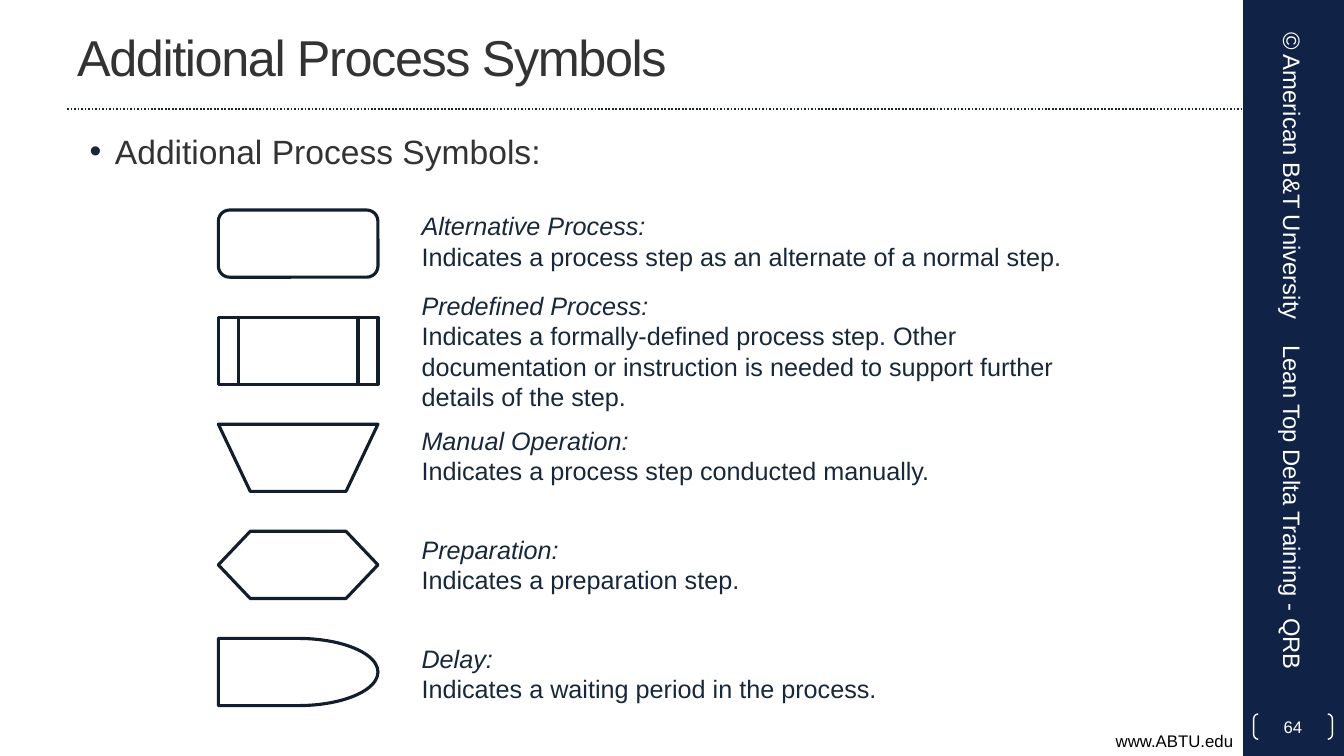
from dataclasses import dataclass

from lxml.etree import SubElement
from pptx import Presentation
from pptx.dml.color import RGBColor
from pptx.enum.dml import MSO_LINE
from pptx.enum.shapes import MSO_CONNECTOR, MSO_SHAPE
from pptx.enum.text import MSO_ANCHOR, MSO_AUTO_SIZE, PP_ALIGN
from pptx.oxml.ns import qn
from pptx.shapes.autoshape import Shape
from pptx.slide import Slide
from pptx.text.text import TextFrame
from pptx.util import Emu, Pt


@dataclass(frozen=True)
class Theme:
    """Colours, type sizes and font of the slide."""
    face: str = "Arial"
    band: str = "102245"
    rule: str = "17273B"
    edge: str = "121E2C"
    ink: str = "18283B"
    head: str = "333333"
    white: str = "FFFFFF"
    black: str = "000000"
    title: int = 36
    lead: int = 24
    body: int = 18
    side: int = 17
    small: int = 12


@dataclass(frozen=True)
class Box:
    """A frame in px."""
    left: int
    top: int
    width: int
    height: int


@dataclass(frozen=True)
class Label:
    """A line of text with its frame and look."""
    text: str
    box: Box
    size: int
    color: str
    align: PP_ALIGN = PP_ALIGN.LEFT
    anchor: MSO_ANCHOR = MSO_ANCHOR.MIDDLE
    turn: int = 0


@dataclass(frozen=True)
class Symbol:
    """A flowchart symbol with its name, meaning and text frame."""
    kind: MSO_SHAPE
    name: str
    text: str
    top: int
    height: int = 68


THEME = Theme()
FIRST, STEP = 200, 102

TITLE = Label("Additional Process Symbols", Box(64, 3, 1067, 101), THEME.title, THEME.head)
LEAD = Label("Additional Process Symbols:", Box(64, 120, 1067, 576), THEME.lead, THEME.head,
             anchor=MSO_ANCHOR.TOP)
LABELS = [
    Label("www.ABTU.edu", Box(0, 691, 1184, 29), THEME.small, THEME.black,
          PP_ALIGN.RIGHT, MSO_ANCHOR.TOP),
    Label("© American B&T University", Box(1079, 142, 304, 51), THEME.side, THEME.white,
          PP_ALIGN.CENTER, turn=90),
    Label("Lean Top Delta Training - QRB", Box(1055, 470, 352, 51), THEME.side, THEME.white,
          turn=90),
]
SYMBOLS = [
    Symbol(MSO_SHAPE.FLOWCHART_ALTERNATE_PROCESS, "Alternative Process:",
           "Indicates a process step as an alternate of a normal step.", 196),
    Symbol(MSO_SHAPE.FLOWCHART_PREDEFINED_PROCESS, "Predefined Process:",
           "Indicates a formally-defined process step. Other documentation or instruction "
           "is needed to support further details of the step.", 272, 126),
    Symbol(MSO_SHAPE.FLOWCHART_MANUAL_OPERATION, "Manual Operation:",
           "Indicates a process step conducted manually.", 400),
    Symbol(MSO_SHAPE.FLOWCHART_PREPARATION, "Preparation:",
           "Indicates a preparation step.", 504),
    Symbol(MSO_SHAPE.FLOWCHART_DELAY, "Delay:",
           "Indicates a waiting period in the process.", 608),
]


def px(size: int) -> Emu:
    """Turn px into EMU."""
    return Emu(size * 9525)


def place(box: Box) -> tuple[Emu, Emu, Emu, Emu]:
    """Give a frame in EMU."""
    return px(box.left), px(box.top), px(box.width), px(box.height)


def style(frame: TextFrame, index: int, size: int, color: str, slant: bool = False) -> None:
    """Set the font of one paragraph."""
    font = frame.paragraphs[index].font
    font.name, font.size, font.italic = THEME.face, Pt(size), slant
    font.color.rgb = RGBColor.from_string(color)


def outline(slide: Slide, kind: MSO_SHAPE, box: Box, color: str, width: float) -> Shape:
    """Draw an unfilled preset shape."""
    shape = slide.shapes.add_shape(kind, *place(box))
    shape.shadow.inherit = False
    shape.fill.background()
    shape.line.color.rgb = RGBColor.from_string(color)
    shape.line.width = Pt(width)
    return shape


def write(slide: Slide, label: Label, bullet: bool = False) -> Shape:
    """Add a text box with one paragraph."""
    shape = slide.shapes.add_textbox(*place(label.box))
    shape.rotation = label.turn
    frame = shape.text_frame
    frame.word_wrap = True
    frame.vertical_anchor = label.anchor
    frame.text = label.text
    line = frame.paragraphs[0]
    line.alignment = label.align
    if bullet:
        props = line._p.get_or_add_pPr()
        props.set("marL", str(px(36)))
        props.set("indent", str(px(-24)))
        tint = SubElement(props, qn("a:buClr"))
        SubElement(tint, qn("a:srgbClr")).set("val", THEME.ink)
        SubElement(props, qn("a:buFont")).set("typeface", THEME.face)
        SubElement(props, qn("a:buChar")).set("char", "•")
    style(frame, 0, label.size, label.color)
    return shape


def explain(slide: Slide, item: Symbol, row: int) -> None:
    """Draw a symbol and its description."""
    outline(slide, item.kind, Box(208, FIRST + row * STEP, 152, 64), THEME.edge, 2.25)
    box = Box(392, item.top, 640, item.height)
    frame = slide.shapes.add_textbox(*place(box)).text_frame
    frame.word_wrap = True
    frame.auto_size = MSO_AUTO_SIZE.SHAPE_TO_FIT_TEXT
    frame.text = f"{item.name}\n{item.text}"
    style(frame, 0, THEME.body, THEME.ink, True)
    style(frame, 1, THEME.body, THEME.ink)


def frame_page(slide: Slide) -> None:
    """Draw the side band and the dotted rule."""
    band = slide.shapes.add_shape(MSO_SHAPE.RECTANGLE, *place(Box(1184, 0, 96, 720)))
    band.shadow.inherit = False
    band.fill.solid()
    band.fill.fore_color.rgb = RGBColor.from_string(THEME.band)
    band.line.fill.background()
    rule = slide.shapes.add_connector(MSO_CONNECTOR.STRAIGHT, px(64), px(104), px(1184), px(104))
    rule.line.color.rgb = RGBColor.from_string(THEME.rule)
    rule.line.width = Pt(1.25)
    rule.line.dash_style = MSO_LINE.ROUND_DOT
    SubElement(rule._element.spPr, qn("a:effectLst"))


def number(slide: Slide) -> None:
    """Draw the bracketed page number."""
    shape = outline(slide, MSO_SHAPE.DOUBLE_BRACKET, Box(1194, 680, 75, 24), THEME.white, 1)
    shape.adjustments[0] = 0.18
    frame = shape.text_frame
    frame.margin_left = frame.margin_right = frame.margin_top = frame.margin_bottom = 0
    frame.vertical_anchor = MSO_ANCHOR.MIDDLE
    frame.text = "64"
    frame.paragraphs[0].alignment = PP_ALIGN.CENTER
    style(frame, 0, THEME.small, THEME.white)


def main() -> None:
    """Build and save the slide."""
    deck = Presentation()
    deck.slide_width, deck.slide_height = px(1280), px(720)
    slide = deck.slides.add_slide(deck.slide_layouts[6])
    frame_page(slide)
    title = write(slide, TITLE)
    title.text_frame.paragraphs[0].runs[0]._r.get_or_add_rPr().set("spc", "-100")
    write(slide, LEAD, bullet=True)
    for label in LABELS:
        write(slide, label)
    number(slide)
    for row, item in enumerate(SYMBOLS):
        explain(slide, item, row)
    deck.save("out.pptx")


if __name__ == "__main__":
    main()
